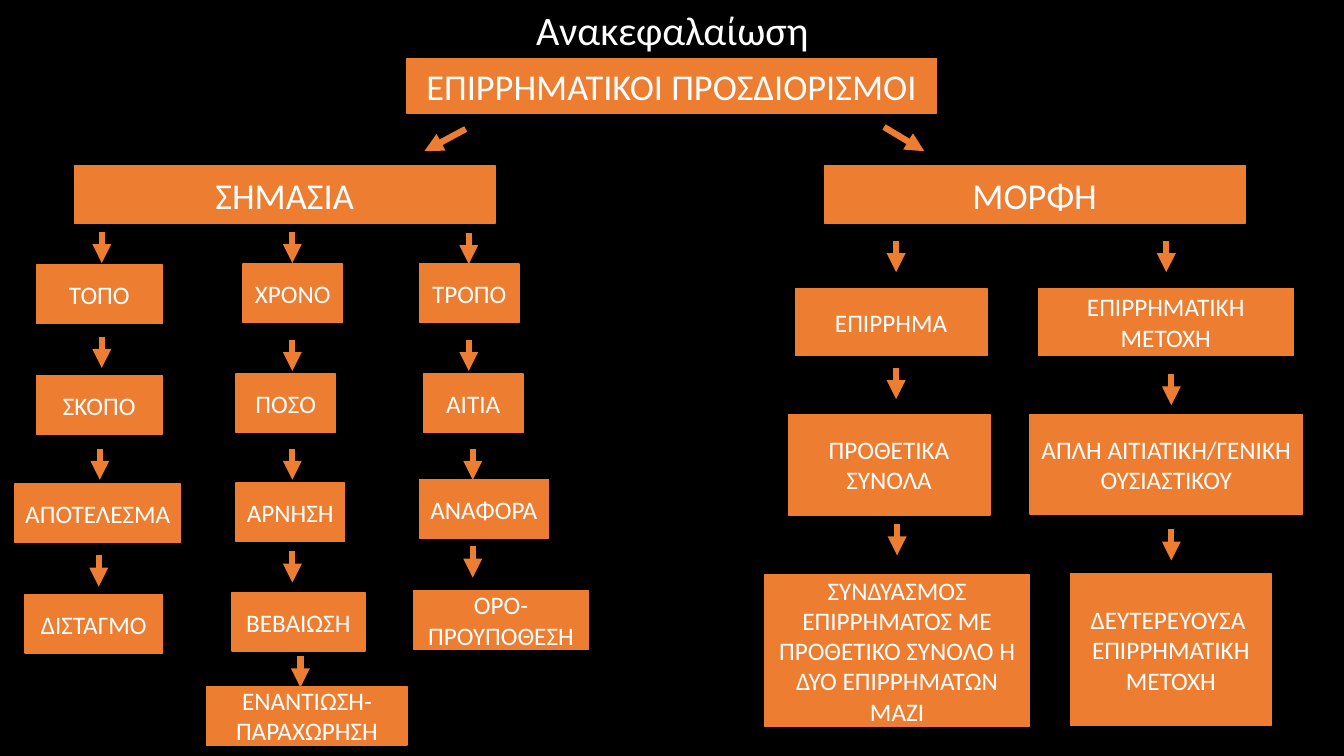
"""Build a slide that maps the kinds of Greek adverbial modifiers."""
from dataclasses import dataclass

from lxml import etree
from pptx import Presentation
from pptx.dml.color import RGBColor
from pptx.enum.shapes import MSO_CONNECTOR, MSO_SHAPE
from pptx.enum.text import MSO_ANCHOR, PP_ALIGN
from pptx.oxml.ns import qn
from pptx.util import Inches, Pt

RECT = MSO_SHAPE.RECTANGLE
LINE = MSO_CONNECTOR.STRAIGHT
MID = MSO_ANCHOR.MIDDLE
MEAN = PP_ALIGN.CENTER
COLS, ROWS = 133.33, 75


@dataclass(frozen=True)
class Theme:
    """Colours, font and sizes in points."""
    back: RGBColor = RGBColor(0x00, 0x00, 0x00)
    fill: RGBColor = RGBColor(0xED, 0x7D, 0x31)
    ink: RGBColor = RGBColor(0xFF, 0xFF, 0xFF)
    font: str = "Calibri"
    title: float = 28.8
    head: float = 26
    body: float = 18
    edge: float = 1
    arrow: float = 4.5


class Chart:
    """Draw on one slide, with lengths in grid columns and rows."""

    def __init__(self, deck, theme):
        """Add a blank slide and paint its background."""
        self.theme = theme
        self.wide, self.high = deck.slide_width, deck.slide_height
        self.slide = deck.slides.add_slide(deck.slide_layouts[6])
        back = self.slide.background.fill
        back.solid()
        back.fore_color.rgb = theme.back

    def x(self, col):
        """Turn columns into a length."""
        return round(self.wide * col / COLS)

    def y(self, row):
        """Turn rows into a length."""
        return round(self.high * row / ROWS)

    def area(self, col, row, wide, high):
        """Turn a grid area into lengths."""
        return self.x(col), self.y(row), self.x(wide), self.y(high)

    def label(self, shape, text, size, space=1.0):
        """Fill a shape with centred text."""
        frame = shape.text_frame
        frame.word_wrap = True
        frame.vertical_anchor = MID
        frame.text = text
        for para in frame.paragraphs:
            para.alignment = MEAN
            para.line_spacing = space
            para.font.name = self.theme.font
            para.font.size = Pt(size)
            para.font.color.rgb = self.theme.ink

    def title(self, area, text):
        """Add the slide title."""
        shape = self.slide.shapes.add_textbox(*self.area(*area))
        self.label(shape, text, self.theme.title, 0.9)

    def box(self, area, text, size):
        """Add a filled box with text."""
        shape = self.slide.shapes.add_shape(RECT, *self.area(*area))
        shape.shadow.inherit = False
        shape.fill.solid()
        shape.fill.fore_color.rgb = self.theme.fill
        shape.line.color.rgb = self.theme.fill
        shape.line.width = Pt(self.theme.edge)
        self.label(shape, text, size)

    def arrow(self, col, row, over, down):
        """Add an arrow that runs over and down from a grid point."""
        link = self.slide.shapes.add_connector(
            LINE, self.x(col), self.y(row),
            self.x(col + over), self.y(row + down))
        link.line.color.rgb = self.theme.fill
        link.line.width = Pt(self.theme.arrow)
        prop = link.element.spPr
        etree.SubElement(prop.find(qn("a:ln")), qn("a:tailEnd"), type="triangle")
        etree.SubElement(prop, qn("a:effectLst"))

    def chain(self, steps, high):
        """Add a column of boxes, each with an arrow above it."""
        for (col, row), (left, top, wide, *own), text in steps:
            self.arrow(col, row, 0, 3.1)
            area = left, top, wide, own[0] if own else high
            self.box(area, text, self.theme.body)


HEADS = [
    ((40.4, 5.8, 52.5, 5.4), "ΕΠΙΡΡΗΜΑΤΙΚΟΙ ΠΡΟΣΔΙΟΡΙΣΜΟΙ"),
    ((7.4, 16.4, 41.7, 5.8), "ΣΗΜΑΣΙΑ"),
    ((81.8, 16.4, 41.7, 5.8), "ΜΟΡΦΗ"),
]
FORKS = [(46.2, 12.8, -4.1, 2.2), (87.7, 12.6, 4, 2.4)]
CHAINS = [
    [
        ((10.1, 23), (3.6, 26.3, 12.5), "ΤΟΠΟ"),
        ((10.1, 33.4), (3.6, 37.3, 12.5), "ΣΚΟΠΟ"),
        ((9.9, 44.5), (1.5, 48, 16.4), "ΑΠΟΤΕΛΕΣΜΑ"),
        ((9.8, 55.1), (2.5, 59, 13.6), "ΔΙΣΤΑΓΜΟ"),
    ],
    [
        ((29, 23), (24.1, 26.2, 9.9), "ΧΡΟΝΟ"),
        ((29, 33.7), (23.4, 37.1, 9.9), "ΠΟΣΟ"),
        ((29, 44.5), (23.4, 47.9, 10.8), "ΑΡΝΗΣΗ"),
        ((29, 54.7), (23, 58.8, 13.2), "ΒΕΒΑΙΩΣΗ"),
        ((29.8, 65.1), (20.5, 68.1, 19.9), "ΕΝΑΝΤΙΩΣΗ-ΠΑΡΑΧΩΡΗΣΗ"),
    ],
    [
        ((46.5, 23.1), (41.6, 26.2, 9.9), "ΤΡΟΠΟ"),
        ((46.5, 33.7), (42, 37.1, 9.9), "ΑΙΤΙΑ"),
        ((46.9, 44.5), (41.6, 47.6, 12.8), "ΑΝΑΦΟΡΑ"),
        ((46.9, 54.2), (41, 58.6, 17.4), "ΟΡΟ-ΠΡΟΥΠΟΘΕΣΗ"),
    ],
    [
        ((88.9, 23.9), (78.9, 28.6, 19, 6.7), "ΕΠΙΡΡΗΜΑ"),
        ((88.9, 36.5), (78.2, 41.1, 20, 10), "ΠΡΟΘΕΤΙΚΑ ΣΥΝΟΛΑ"),
        ((89, 52), (75.9, 57, 26.2, 15.1),
         "ΣΥΝΔΥΑΣΜΟΣ ΕΠΙΡΡΗΜΑΤΟΣ ΜΕ ΠΡΟΘΕΤΙΚΟ ΣΥΝΟΛΟ Ή ΔΥΟ ΕΠΙΡΡΗΜΑΤΩΝ ΜΑΖΙ"),
    ],
    [
        ((115.7, 23.9), (103, 28.6, 25.3, 6.7), "ΕΠΙΡΡΗΜΑΤΙΚΗ\nΜΕΤΟΧΗ"),
        ((116.2, 37.1), (102.2, 41.1, 27, 9.9),
         "ΑΠΛΗ ΑΙΤΙΑΤΙΚΗ/ΓΕΝΙΚΗ ΟΥΣΙΑΣΤΙΚΟΥ"),
        ((116.2, 52.5), (106.2, 56.9, 19.9, 15.1),
         "ΔΕΥΤΕΡΕΥΟΥΣΑ \nΕΠΙΡΡΗΜΑΤΙΚΗ\nΜΕΤΟΧΗ"),
    ],
]


def main():
    """Draw the slide and save it."""
    deck = Presentation()
    deck.slide_width, deck.slide_height = Inches(13.33), Inches(7.5)
    theme = Theme()
    chart = Chart(deck, theme)
    chart.title((9.2, 0.8, 115, 4.8), "Ανακεφαλαίωση")
    for area, text in HEADS:
        chart.box(area, text, theme.head)
    for fork in FORKS:
        chart.arrow(*fork)
    for steps in CHAINS:
        chart.chain(steps, 5.8)
    deck.save("out.pptx")


if __name__ == "__main__":
    main()
